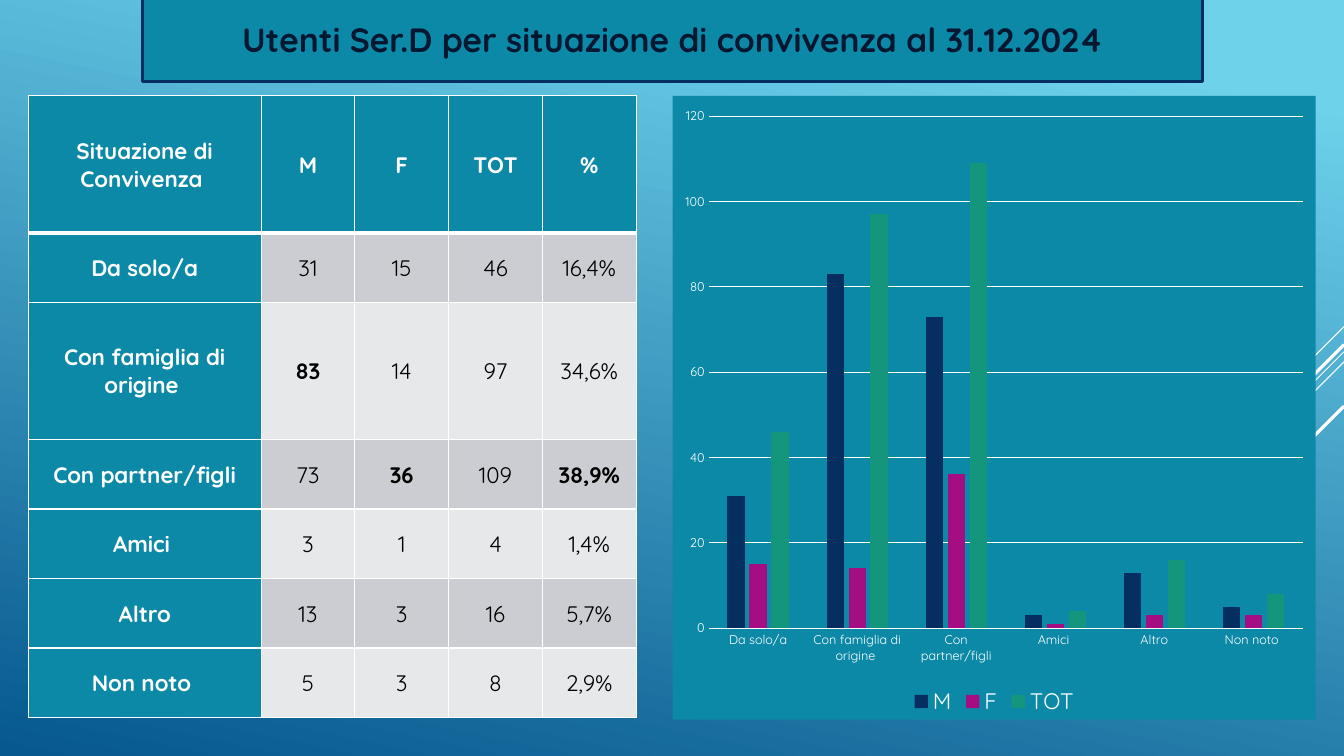
from dataclasses import dataclass
from lxml.etree import SubElement
from pptx import Presentation
from pptx.chart.data import CategoryChartData
from pptx.dml.color import RGBColor
from pptx.enum.chart import XL_CHART_TYPE as ChartType, XL_LEGEND_POSITION as LegendPos, XL_TICK_MARK as Tick
from pptx.enum.shapes import MSO_CONNECTOR as Connector
from pptx.enum.text import MSO_ANCHOR as Anchor, MSO_AUTO_SIZE as AutoSize, PP_ALIGN as Align
from pptx.oxml import parse_xml
from pptx.oxml.ns import nsdecls, qn
from pptx.util import Inches, Pt


@dataclass(frozen=True)
class Theme:
    font: str = "Quicksand"
    teal: str = "0D89A8"
    navy: str = "052F61"
    title: str = "031730"
    white: str = "FFFFFF"
    black: str = "000000"
    bands: tuple = ("CCCDD2", "E7E8EA")
    series: tuple = ("052F61", "A50E82", "14967C")
    sky: tuple = (("6ED2EB", 0.1), ("06588E", 1))
    title_size: int = 24
    body_size: int = 16
    axis_size: int = 9
    chart_size: int = 10


TITLE = "Utenti Ser.D per situazione di convivenza al 31.12.2024"
HEADER = ("Situazione di Convivenza ", "M", "F", "TOT", "%")
ROWS = [
    ("Da solo/a", 31, 15, 46, "16,4%"),
    ("Con famiglia di origine ", 83, 14, 97, "34,6%"),
    ("Con partner/figli", 73, 36, 109, "38,9%"),
    ("Amici ", 3, 1, 4, "1,4%"),
    ("Altro", 13, 3, 16, "5,7%"),
    ("Non noto ", 5, 3, 8, "2,9%"),
]
HIGHLIGHTS = {(2, 1), (3, 2), (3, 4)}
TALL_ROWS = {0, 2}
STRIPES = [(3.24, 1, 0.75), (3.49, 3.26, 0.75), (3.59, 2.07, 0.75), (3.42, 1.91, 2.25), (4.03, 1.39, 2.25)]
WIDTH, HEIGHT = 13.33, 7.5
TOP, PANEL_H = 0.95, 6.19
T = Theme()


def rgb(value):
    return RGBColor.from_string(value)


def set_font(font, size, color=T.white, bold=False):
    font.name, font.size, font.bold = T.font, Pt(size), bold
    font.color.rgb = rgb(color)


def write(tf, text, size=T.body_size, color=T.white, bold=False):
    p = tf.paragraphs[0]
    p.alignment = Align.CENTER
    r = p.add_run()
    r.text = text
    set_font(r.font, size, color, bold)


def set_line(line, color, width):
    line.color.rgb = rgb(color)
    line.width = Pt(width)


def add_background(s):
    fill = s.background.fill
    fill.gradient()
    fill.gradient_angle = 360 - 102
    for stop, (color, position) in zip(fill.gradient_stops, T.sky):
        stop.color.rgb = rgb(color)
        stop.position = position


def add_stripes(s):
    for y, length, width in STRIPES:
        line = s.shapes.add_connector(
            Connector.STRAIGHT, Inches(WIDTH), Inches(y), Inches(WIDTH - length), Inches(y + length))
        set_line(line.line, T.white, width)
        SubElement(line._element.spPr, qn("a:effectLst"))


def add_title(s):
    sp = s.shapes.title
    sp.left, sp.top, sp.width, sp.height = map(Inches, (1.41, 0.14, 10.52, 0.5))
    sp.fill.solid()
    sp.fill.fore_color.rgb = rgb(T.teal)
    set_line(sp.line, T.navy, 2.25)
    tf = sp.text_frame
    tf.auto_size = AutoSize.SHAPE_TO_FIT_TEXT
    tf.vertical_anchor = Anchor.MIDDLE
    write(tf, TITLE, size=T.title_size, color=T.title, bold=True)


def add_chart(s):
    data = CategoryChartData()
    data.categories = [row[0] for row in ROWS]
    for col in range(1, 4):
        data.add_series(HEADER[col], [row[col] for row in ROWS])
    chart = s.shapes.add_chart(
        ChartType.COLUMN_CLUSTERED, Inches(6.67), Inches(TOP), Inches(6.38), Inches(PANEL_H), data).chart
    set_font(chart.font, T.chart_size)
    chart._chartSpace.find(qn("c:txPr")).addprevious(parse_xml(
        f'<c:spPr {nsdecls("c", "a")}><a:solidFill><a:srgbClr val="{T.teal}"/></a:solidFill>'
        '<a:ln><a:noFill/></a:ln></c:spPr>'))
    chart.has_title = False
    chart.has_legend = True
    chart.legend.position = LegendPos.BOTTOM
    chart.legend.include_in_layout = False
    set_font(chart.legend.font, T.body_size)

    plot = chart.plots[0]
    plot.gap_width, plot.overlap, plot.vary_by_categories = 219, -27, False
    for series, color in zip(plot.series, T.series):
        series.format.fill.solid()
        series.format.fill.fore_color.rgb = rgb(color)

    for axis in (chart.category_axis, chart.value_axis):
        axis.major_tick_mark = axis.minor_tick_mark = Tick.NONE
        set_font(axis.tick_labels.font, T.axis_size)
    set_line(chart.category_axis.format.line, T.white, 0.75)
    values = chart.value_axis
    values.minimum_scale, values.maximum_scale, values.major_unit = 0, 120, 20
    values.format.line.fill.background()
    set_line(values.major_gridlines.format.line, T.white, 0.75)


def set_borders(cell, **widths):
    tc_pr = cell._tc.get_or_add_tcPr()
    for i, side in enumerate("LRTB"):
        tc_pr.insert(i, parse_xml(
            f'<a:ln{side} {nsdecls("a")} w="{Pt(widths.get(side, 1))}"><a:solidFill>'
            f'<a:srgbClr val="{T.white}"/></a:solidFill></a:ln{side}>'))


def add_table(s):
    rows = [HEADER, *ROWS]
    table = s.shapes.add_table(
        len(rows), len(HEADER), Inches(0.28), Inches(TOP), Inches(6.02), Inches(PANEL_H)).table
    for i, col in enumerate(table.columns):
        col.width = Inches(0.93 if i else 2.31)
    for i, row in enumerate(rows):
        table.rows[i].height = Inches(1.36 if i in TALL_ROWS else 0.69)
        for j, value in enumerate(row):
            cell = table.cell(i, j)
            heading = i == 0 or j == 0
            cell.fill.solid()
            cell.fill.fore_color.rgb = rgb(T.teal if heading else T.bands[(i - 1) % 2])
            cell.vertical_anchor = Anchor.MIDDLE
            cell.margin_left = cell.margin_right = cell.margin_top = Inches(0.01)
            cell.margin_bottom = 0
            write(cell.text_frame, str(value), color=T.white if heading else T.black,
                  bold=heading or (i, j) in HIGHLIGHTS)
            set_borders(cell, B=1 if i else 3, T=3 if i == 1 else 1)


def main():
    prs = Presentation()
    prs.slide_width, prs.slide_height = Inches(WIDTH), Inches(HEIGHT)
    s = prs.slides.add_slide(prs.slide_layouts[5])
    add_background(s)
    add_stripes(s)
    add_chart(s)
    add_table(s)
    add_title(s)
    prs.save("out.pptx")


if __name__ == "__main__":
    main()
